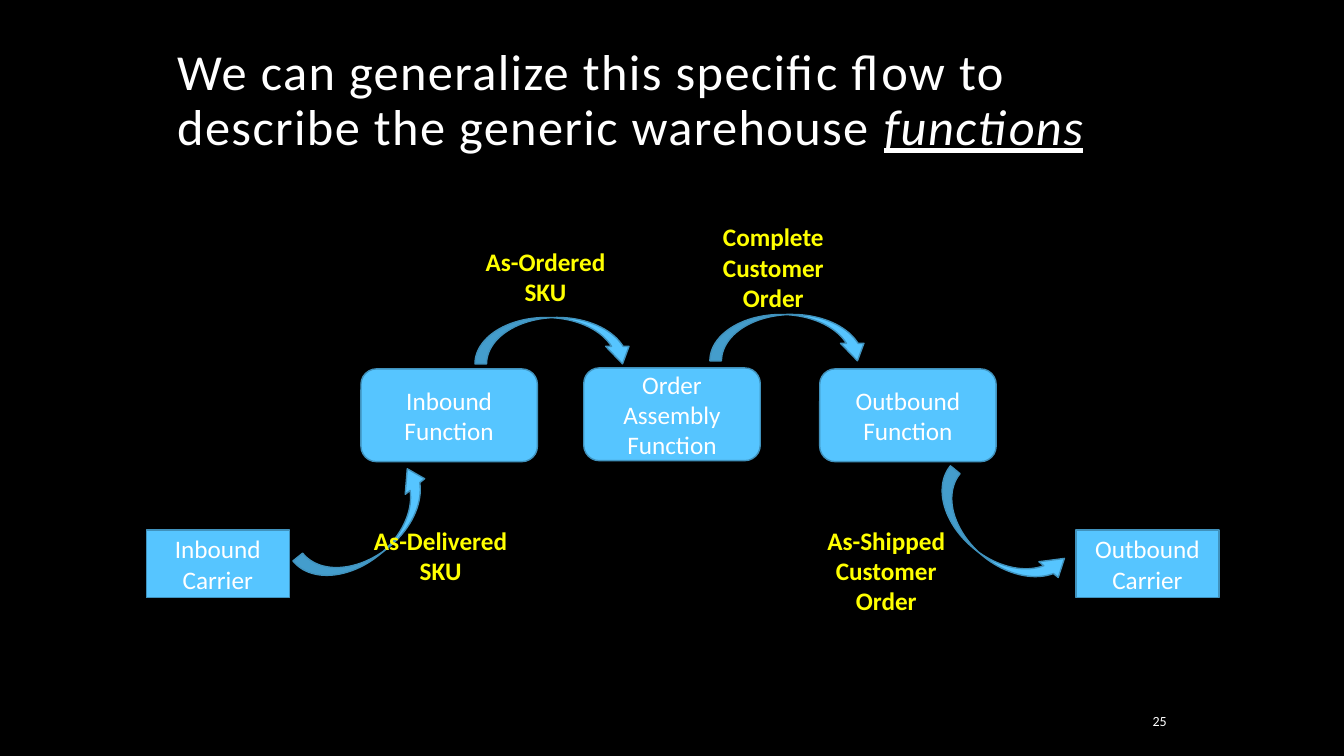
from pptx import Presentation
from pptx.dml.color import RGBColor
from pptx.enum.shapes import MSO_SHAPE
from pptx.enum.text import MSO_ANCHOR, PP_ALIGN
from pptx.util import Inches, Pt

# Content
TITLE = [
    ("We can generalize this specific flow to describe the generic warehouse ", {}),
    ("functions", {"italic": True, "underline": True}),
]
PAGE_NUMBER = "25"
CARRIERS = [("Inbound Carrier", 1.45), ("Outbound Carrier", 10.67)]  # text, left
FUNCTIONS = [  # text, left, top
    ("Inbound Function", 3.58, 3.66),
    ("Order Assembly Function", 5.79, 3.65),
    ("Outbound Function", 8.13, 3.66),
]
FLOWS = [  # label, its left, top, height; arrow left, top, width, rotation, flips
    ("As-Delivered SKU", (3.58, 5.16, 1.01), (3.43, 4.47, 0.49), 51.1, ("flipH", "flipV")),
    ("As-Ordered SKU", (4.62, 2.39, 0.71), (5.27, 2.59, 0.46), 270, ("flipH",)),
    ("Complete Customer Order", (6.88, 2.15, 1.01), (7.6, 2.56, 0.46), 270, ("flipH",)),
    ("As-Shipped Customer Order", (8, 5.16, 1.01), (9.64, 4.52, 0.49), 309.1, ()),
]

# Sizes and colours
CARRIER_TOP, CARRIER_SIZE = 5.26, (1.42, 0.67)
FUNCTION_SIZE = (1.75, 0.92)
LABEL_WIDTH, ARROW_LENGTH = 1.58, 1.58
ARROW_ADJUSTMENTS = (0.25, 0.504, 0.377)
BLACK, WHITE, YELLOW = "000000", "FFFFFF", "FFFF00"
BLUE, EDGE_BLUE = "56C5FF", "4092BD"


def color(hex_code):
    return RGBColor.from_string(hex_code)


def write(holder, runs, size=18, fill=WHITE, bold=False, align=PP_ALIGN.CENTER,
          anchor=MSO_ANCHOR.TOP, line_spacing=None, tracking=None):
    """Write one paragraph of (text, styles) runs, or plain text, into a shape."""
    frame = holder.text_frame
    frame.word_wrap = True
    frame.vertical_anchor = anchor
    paragraph = frame.paragraphs[0]
    paragraph.alignment = align
    if line_spacing:
        paragraph.line_spacing = line_spacing
    for text, styles in [(runs, {})] if isinstance(runs, str) else runs:
        run = paragraph.add_run()
        run.text = text
        run.font.name = "Calibri"
        run.font.size = Pt(size)
        run.font.bold = bold
        run.font.italic = styles.get("italic")
        run.font.underline = styles.get("underline")
        run.font.color.rgb = color(fill)
        if tracking:
            run.font._element.set("spc", str(tracking * 100))


def add_text(slide, runs, left, top, width, height, **styles):
    box = slide.shapes.add_textbox(*map(Inches, (left, top, width, height)))
    write(box, runs, **styles)


def add_blue(slide, preset, left, top, width, height):
    shape = slide.shapes.add_shape(preset, *map(Inches, (left, top, width, height)))
    shape.shadow.inherit = False
    shape.fill.solid()
    shape.fill.fore_color.rgb = color(BLUE)
    shape.line.color.rgb = color(EDGE_BLUE)
    shape.line.width = Pt(1)
    return shape


def main():
    deck = Presentation()
    deck.slide_width, deck.slide_height = Inches(13.33), Inches(7.5)
    slide = deck.slides.add_slide(deck.slide_layouts[6])
    slide.background.fill.solid()
    slide.background.fill.fore_color.rgb = color(BLACK)

    # Title
    add_text(slide, TITLE, 1.66, 0.42, 10, 1.5, size=36, align=PP_ALIGN.LEFT,
             line_spacing=0.9, tracking=1)

    # Carriers and warehouse functions
    for name, left in CARRIERS:
        carrier = add_blue(slide, MSO_SHAPE.RECTANGLE, left, CARRIER_TOP, *CARRIER_SIZE)
        write(carrier, name, anchor=MSO_ANCHOR.MIDDLE)
    for name, left, top in FUNCTIONS:
        function = add_blue(slide, MSO_SHAPE.ROUNDED_RECTANGLE, left, top, *FUNCTION_SIZE)
        write(function, name, anchor=MSO_ANCHOR.MIDDLE)

    # Curved arrows, each with its label on top
    for label, (left, top, height), arrow_place, rotation, flips in FLOWS:
        arrow = add_blue(slide, MSO_SHAPE.CURVED_RIGHT_ARROW, *arrow_place, ARROW_LENGTH)
        for index, value in enumerate(ARROW_ADJUSTMENTS):
            arrow.adjustments[index] = value
        arrow.rotation = rotation
        for flip in flips:
            arrow._element.spPr.xfrm.set(flip, "1")
        add_text(slide, label, left, top, LABEL_WIDTH, height, fill=YELLOW, bold=True)

    # Page number
    add_text(slide, PAGE_NUMBER, 10.75, 7, 0.92, 0.3, size=10,
             align=PP_ALIGN.RIGHT, anchor=MSO_ANCHOR.MIDDLE)

    deck.save("out.pptx")


if __name__ == "__main__":
    main()
